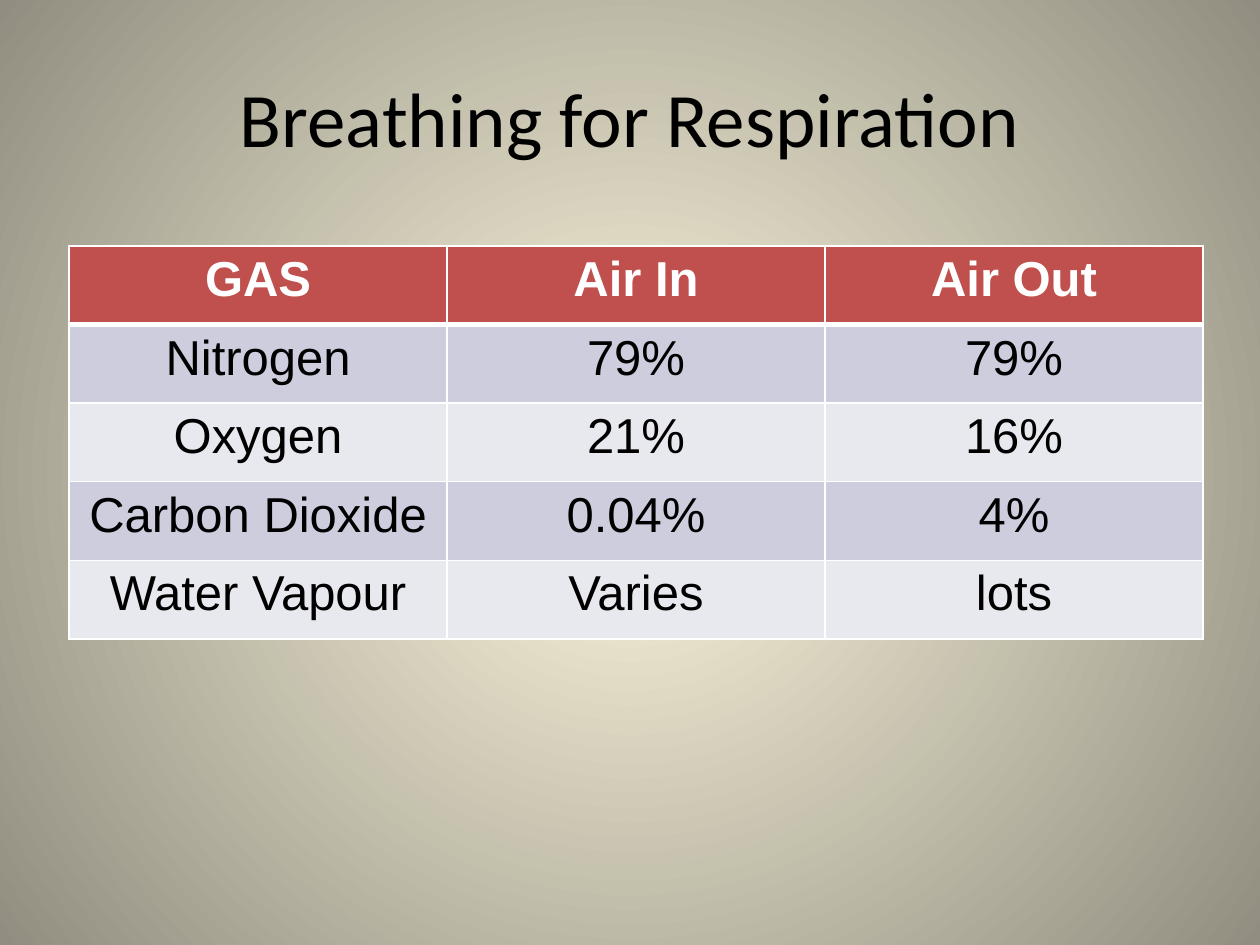
import pptx
import pptx.dml.color
import pptx.enum.text
import pptx.oxml
import pptx.oxml.ns
import pptx.util

TITLE = "Breathing for Respiration"
ROWS = [
    ("GAS", "Air In", "Air Out"),
    ("Nitrogen", "79%", "79%"),
    ("Oxygen", "21%", "16%"),
    ("Carbon Dioxide", "0.04%", "4%"),
    ("Water Vapour", "Varies", "lots"),
]
COLORS = {
    "glow": "FCF7DD", "edge": "918E81", "head": "C0504D",
    "odd": "CDCDDE", "even": "E8E8EF", "white": "FFFFFF", "black": "000000",
}
TITLE_BOX = (63, 38, 1134, 158)
TABLE_BOX = (69, 246, 1134, 393)
NS = pptx.oxml.ns.nsdecls("a")


def px(n):
    return pptx.util.Emu(round(n * 914400 / 126))


def rgb(name):
    return pptx.dml.color.RGBColor.from_string(COLORS[name])


def write(frame, text, size=28, font="Arial", color="black", bold=False):
    par = frame.paragraphs[0]
    par.alignment = pptx.enum.text.PP_ALIGN.CENTER
    run = par.add_run()
    run.text = text
    run.font.size = pptx.util.Pt(size)
    run.font.name = font
    run.font.bold = bold
    run.font.color.rgb = rgb(color)


def glow(slide):
    """Fill the background with a gradient that spreads from the centre."""
    fill = slide.background.fill
    fill.gradient()
    for stop, name, place in zip(fill.gradient_stops, ("glow", "edge"), (0, 1)):
        stop.color.rgb = rgb(name)
        stop.position = place
    for lin in slide.element.xpath(".//p:bg//a:lin"):
        lin.getparent().replace(lin, pptx.oxml.parse_xml(
            f'<a:path {NS} path="circle">'
            '<a:fillToRect l="50000" t="50000" r="50000" b="50000"/></a:path>'))


def border(cell, **widths):
    """Draw white cell borders; widths are points by side, in L, R, T, B order."""
    for i, (side, width) in enumerate(widths.items()):
        cell._tc.get_or_add_tcPr().insert(i, pptx.oxml.parse_xml(
            f'<a:ln{side} {NS} w="{pptx.util.Pt(width)}"><a:solidFill>'
            f'<a:srgbClr val="{COLORS["white"]}"/></a:solidFill></a:ln{side}>'))


def main():
    deck = pptx.Presentation()
    deck.slide_width, deck.slide_height = px(1260), px(945)
    slide = deck.slides.add_slide(deck.slide_layouts[6])
    glow(slide)

    frame = slide.shapes.add_textbox(*map(px, TITLE_BOX)).text_frame
    frame.word_wrap = True
    frame.vertical_anchor = pptx.enum.text.MSO_ANCHOR.MIDDLE
    write(frame, TITLE, size=44, font="Calibri")

    grid = slide.shapes.add_table(
        len(ROWS), len(ROWS[0]), *map(px, TABLE_BOX)).table
    for r, row in enumerate(ROWS):
        head = r == 0
        shade = "head" if head else "odd" if r % 2 else "even"
        for c, text in enumerate(row):
            cell = grid.cell(r, c)
            cell.fill.solid()
            cell.fill.fore_color.rgb = rgb(shade)
            border(cell, L=1, R=1, T=3 if r == 1 else 1, B=3 if head else 1)
            write(cell.text_frame, text, bold=head,
                  color="white" if head else "black")

    deck.save("out.pptx")


if __name__ == "__main__":
    main()
